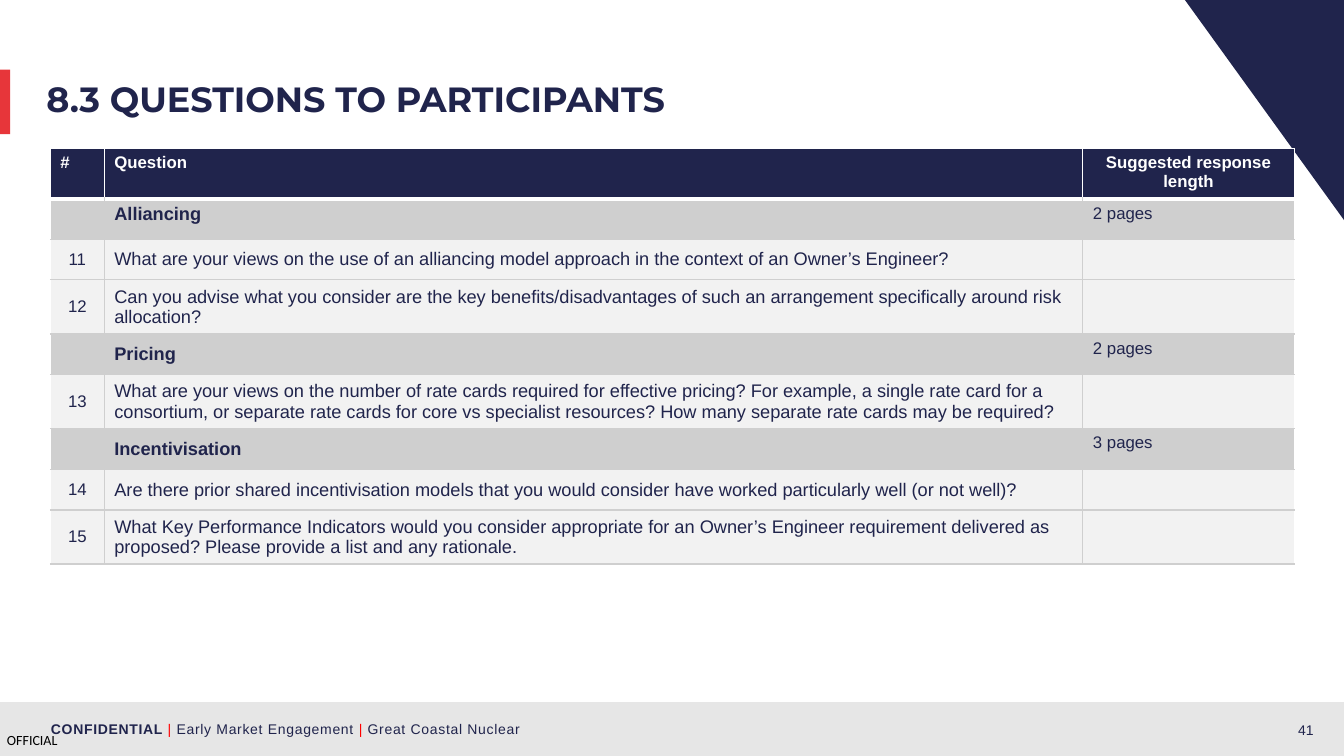
from lxml.etree import SubElement
from pptx import Presentation
from pptx.dml.color import RGBColor
from pptx.enum.shapes import MSO_SHAPE
from pptx.enum.text import MSO_ANCHOR, MSO_AUTO_SIZE, PP_ALIGN
from pptx.oxml.ns import qn
from pptx.util import Pt

NAVY = RGBColor(0x20, 0x24, 0x4C)
RED = RGBColor(0xE7, 0x36, 0x3A)
BRIGHT_RED = RGBColor(0xFF, 0x00, 0x00)
WHITE = RGBColor(0xFF, 0xFF, 0xFF)
BLACK = RGBColor(0x00, 0x00, 0x00)
FOOTER_GREY = RGBColor(0xE6, 0xE6, 0xE6)
SECTION_GREY = RGBColor(0xCF, 0xCF, 0xCF)
ROW_GREY = RGBColor(0xF2, 0xF2, 0xF2)

PAGE_WIDTH, PAGE_HEIGHT = 960, 540
COLUMN_WIDTHS = (38.5, 699, 151)

# Number, question or section name, response length, row height
ROWS = [
    ("#", "Question", "Suggested response length", 35.5),
    ("", "Alliancing", "2 pages", 27.5),
    ("11", "What are your views on the use of an alliancing model approach in the "
     "context of an Owner’s Engineer?", "", 29.1),
    ("12", "Can you advise what you consider are the key benefits/disadvantages of such "
     "an arrangement specifically around risk allocation?", "", 38.6),
    ("", "Pricing", "2 pages", 29.1),
    ("13", "What are your views on the number of rate cards required for effective "
     "pricing? For example, a single rate card for a consortium, or separate rate cards "
     "for core vs specialist resources? How many separate rate cards may be required?",
     "", 38.6),
    ("", "Incentivisation", "3 pages", 29.1),
    ("14", "Are there prior shared incentivisation models that you would consider have "
     "worked particularly well (or not well)?", "", 29.1),
    ("15", "What Key Performance Indicators would you consider appropriate for an Owner’s "
     "Engineer requirement delivered as proposed? Please provide a list and any "
     "rationale.", "", 38.6),
]


def style(span, size, color, bold=False, font="Arial"):
    span.font.size = Pt(size)
    span.font.name = font
    span.font.bold = bold
    span.font.color.rgb = color


def add_block(page, kind, left, top, width, height, color):
    block = page.shapes.add_shape(kind, Pt(left), Pt(top), Pt(width), Pt(height))
    block.shadow.inherit = False
    block.fill.solid()
    block.fill.fore_color.rgb = color
    block.line.fill.background()
    return block


def add_label(page, left, top, width, height, text, font, color, align, margin):
    box = page.shapes.add_textbox(Pt(left), Pt(top), Pt(width), Pt(height))
    frame = box.text_frame
    frame.margin_left = frame.margin_right = Pt(margin)
    frame.margin_top = frame.margin_bottom = Pt(margin / 2)
    frame.word_wrap = margin > 0
    frame.text = text
    para = frame.paragraphs[0]
    para.alignment = align
    style(para.runs[0], 10, color, font=font)


def add_footer(page, left, top, width, height):
    band = add_block(page, MSO_SHAPE.RECTANGLE, left, top, width, height, FOOTER_GREY)
    frame = band.text_frame
    frame.margin_left = Pt(36.4)
    frame.vertical_anchor = MSO_ANCHOR.MIDDLE
    para = frame.paragraphs[0]
    para.alignment = PP_ALIGN.LEFT
    for text, color in (("CONFIDENTIAL ", NAVY), ("|", BRIGHT_RED),
                        (" Early Market Engagement ", NAVY), ("|", BRIGHT_RED),
                        (" Great Coastal Nuclear", NAVY)):
        span = para.add_run()
        span.text = text
        style(span, 10, color, bold=text.startswith("CONF"))
        span.font._element.set("spc", "50")
    # Page number and classification
    add_label(page, left + 835.2, top + 10, 110.2, 19.4, "41", "Arial", NAVY,
              PP_ALIGN.RIGHT, 7.2)
    add_label(page, left + 5, top + 21, 38, 12, "OFFICIAL", "Calibri", BLACK,
              PP_ALIGN.LEFT, 0)


def add_title(page, left, top, width, height):
    title = page.shapes.title
    title.left, title.top, title.width, title.height = map(Pt, (left, top, width, height))
    frame = title.text_frame
    frame.text = "8.3 QUESTIONS TO PARTICIPANTS"
    frame.auto_size = MSO_AUTO_SIZE.NONE
    frame.vertical_anchor = MSO_ANCHOR.MIDDLE
    para = frame.paragraphs[0]
    para.alignment = PP_ALIGN.LEFT
    para.line_spacing = 0.9
    para.space_before = Pt(10)
    style(para.runs[0], 25, NAVY, bold=True, font="Montserrat")


def set_borders(cell, row, column):
    is_header = row == 0
    colors = {
        "L": WHITE if is_header or column == 0 else SECTION_GREY,
        "R": WHITE if is_header or column == 2 else SECTION_GREY,
        "T": WHITE if row <= 1 else SECTION_GREY,
        "B": WHITE if is_header else SECTION_GREY,
    }
    properties = cell._tc.get_or_add_tcPr()
    for side, color in colors.items():
        width = Pt(3) if is_header and side == "B" else Pt(1)
        line = SubElement(properties, qn(f"a:ln{side}"), w=str(width))
        fill = SubElement(line, qn("a:solidFill"))
        SubElement(fill, qn("a:srgbClr"), val=str(color))


def fill_cell(cell, row, column, text, is_section):
    is_header = row == 0
    set_borders(cell, row, column)
    cell.fill.solid()
    cell.fill.fore_color.rgb = (NAVY if is_header else
                                SECTION_GREY if is_section else ROW_GREY)
    if row > 1 and column < 2:
        cell.vertical_anchor = MSO_ANCHOR.MIDDLE
    if not text:
        return
    cell.text_frame.text = text
    para = cell.text_frame.paragraphs[0]
    if column == (2 if is_header else 0):
        para.alignment = PP_ALIGN.CENTER
    size = 13 if column == 1 and not is_header else 12
    style(para.runs[0], size, WHITE if is_header else NAVY,
          bold=is_header or (is_section and column == 1))


def add_questions(page, left, top):
    height = sum(row[-1] for row in ROWS)
    frame = page.shapes.add_table(len(ROWS), len(COLUMN_WIDTHS), Pt(left), Pt(top),
                                  Pt(sum(COLUMN_WIDTHS)), Pt(height))
    table = frame.table
    table.first_row = table.horz_banding = False
    for column, width in zip(table.columns, COLUMN_WIDTHS):
        column.width = Pt(width)
    for row, (*texts, row_height) in enumerate(ROWS):
        table.rows[row].height = Pt(row_height)
        for column, text in enumerate(texts):
            fill_cell(table.cell(row, column), row, column, text, not texts[0])


def main():
    deck = Presentation()
    deck.slide_width, deck.slide_height = Pt(PAGE_WIDTH), Pt(PAGE_HEIGHT)
    page = deck.slides.add_slide(deck.slide_layouts[5])
    add_footer(page, 0, 501.6, PAGE_WIDTH, 38.4)
    # Corner triangle and title accent
    corner = add_block(page, MSO_SHAPE.RIGHT_TRIANGLE, 846.4, 0, 114.2, 158, NAVY)
    corner.rotation = 180
    add_block(page, MSO_SHAPE.RECTANGLE, 0, 49.7, 7.3, 46.1, RED)
    add_questions(page, 36, 106)
    add_title(page, 26, 46.8, 834, 51)
    deck.save("out.pptx")


if __name__ == "__main__":
    main()
